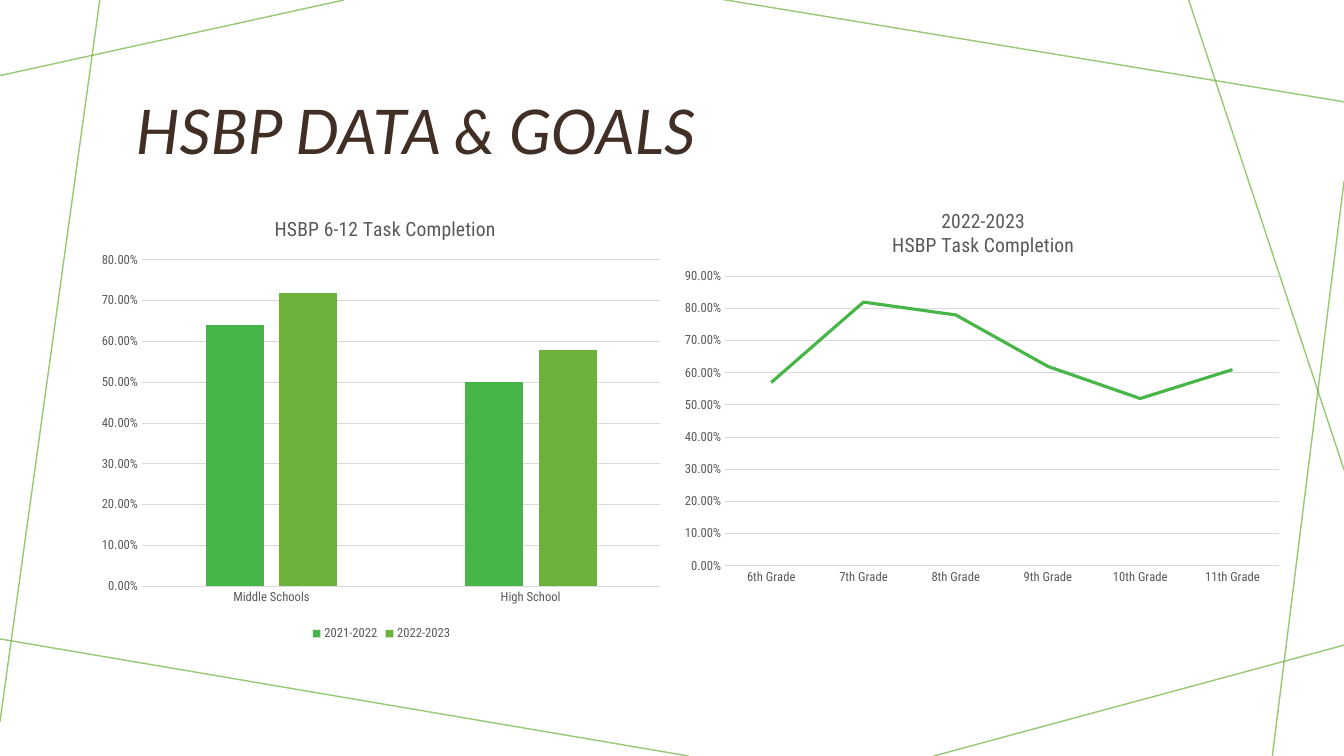
import dataclasses

import pptx
import pptx.chart.data
import pptx.dml.color
import pptx.enum.chart
import pptx.enum.shapes
import pptx.enum.text
import pptx.oxml
import pptx.oxml.ns
import pptx.util

Inches = pptx.util.Inches
Pt = pptx.util.Pt


@dataclasses.dataclass(frozen=True)
class Theme:
    green: str = "47B547"
    olive: str = "6CB13B"
    brown: str = "412E24"
    gray: str = "595959"
    grid: str = "D9D9D9"
    title_font: str = "Lato"
    chart_font: str = "Roboto Condensed"
    title_size: float = 44
    chart_title_size: float = 14
    label_size: float = 9
    rule_width: float = 1
    grid_width: float = 0.75
    series_width: float = 2.25


THEME = Theme()

RULES = [
    (3.41, 0, 0, 0.75),
    (0.99, 0, 0, 7.16),
    (6.83, 7.5, -0.05, 6.33),
    (13.33, 6.4, 9.26, 7.5),
    (13.33, 1.8, 12.62, 7.5),
    (13.33, 4.66, 11.79, 0),
    (13.33, 1.01, 7.14, -0.01),
]


def rgb(value):
    return pptx.dml.color.RGBColor.from_string(value)


def style_font(font, name, size, color):
    font.name = name
    font.size = Pt(size)
    font.color.rgb = rgb(color)


def style_line(line, color, width):
    line.color.rgb = rgb(color)
    line.width = Pt(width)


def add_rule(slide, x1, y1, x2, y2):
    straight = pptx.enum.shapes.MSO_CONNECTOR.STRAIGHT
    rule = slide.shapes.add_connector(
        straight, Inches(x1), Inches(y1), Inches(x2), Inches(y2))
    style_line(rule.line, THEME.olive, THEME.rule_width)
    sp_pr = rule._element.spPr
    color = sp_pr.find(".//" + pptx.oxml.ns.qn("a:srgbClr"))
    color.append(pptx.oxml.parse_xml(
        f'<a:alpha {pptx.oxml.ns.nsdecls("a")} val="70000"/>'))
    sp_pr.append(pptx.oxml.parse_xml(
        f'<a:effectLst {pptx.oxml.ns.nsdecls("a")}/>'))


def add_title(slide, text):
    sp = slide.shapes.add_textbox(
        Inches(1.25), Inches(0.58), Inches(10.83), Inches(1.51))
    tf = sp.text_frame
    tf.word_wrap = True
    tf.vertical_anchor = pptx.enum.text.MSO_ANCHOR.MIDDLE
    p = tf.paragraphs[0]
    p.line_spacing = 0.9
    r = p.add_run()
    r.text = text
    r.font.italic = True
    style_font(r.font, THEME.title_font, THEME.title_size, THEME.brown)


def manual_layout(x, y, w=None, h=None):
    target = "" if w is None else '<c:layoutTarget val="inner"/>'
    size = "" if w is None else f'<c:w val="{w:.3f}"/><c:h val="{h:.3f}"/>'
    return pptx.oxml.parse_xml(
        f'<c:layout {pptx.oxml.ns.nsdecls("c")}><c:manualLayout>{target}'
        '<c:xMode val="edge"/><c:yMode val="edge"/>'
        f'<c:x val="{x:.3f}"/><c:y val="{y:.3f}"/>{size}'
        '</c:manualLayout></c:layout>')


def replace_layout(parent, layout, position):
    for old in parent.findall(pptx.oxml.ns.qn("c:layout")):
        parent.remove(old)
    parent.insert(position, layout)


def add_chart_title(chart, lines, x, y):
    title = chart.chart_title
    tf = title.text_frame
    for i, text in enumerate(lines):
        p = tf.add_paragraph() if i else tf.paragraphs[0]
        r = p.add_run()
        r.text = text
        r.font.bold = False
        style_font(r.font, THEME.chart_font, THEME.chart_title_size, THEME.gray)
    title.include_in_layout = False
    replace_layout(title._element, manual_layout(x, y), 1)


def style_axes(chart, maximum):
    no_tick = pptx.enum.chart.XL_TICK_MARK.NONE
    for axis in (chart.category_axis, chart.value_axis):
        axis.major_tick_mark = no_tick
        axis.minor_tick_mark = no_tick
        style_font(axis.tick_labels.font, THEME.chart_font,
                   THEME.label_size, THEME.gray)
    style_line(chart.category_axis.format.line, THEME.grid, THEME.grid_width)
    values = chart.value_axis
    values.minimum_scale = 0
    values.maximum_scale = maximum
    values.major_unit = 0.1
    values.format.line.fill.background()
    style_line(values.major_gridlines.format.line, THEME.grid, THEME.grid_width)
    values.tick_labels.number_format = "0.00%"
    values.tick_labels.number_format_is_linked = False


def add_chart(slide, kind, box, categories, series, title, title_at, plot, maximum):
    data = pptx.chart.data.CategoryChartData(number_format="0.00%")
    data.categories = categories
    for name, values in series:
        data.add_series(name, values)
    chart = slide.shapes.add_chart(kind, *map(Inches, box), data).chart
    style_font(chart.font, THEME.chart_font, THEME.label_size, THEME.gray)
    chart.has_legend = False
    chart.plots[0].vary_by_categories = False
    add_chart_title(chart, title, *title_at)
    style_axes(chart, maximum)
    left, top, width, height = box
    x, y, w, h = plot
    layout = manual_layout((x - left) / width, (y - top) / height,
                           w / width, h / height)
    replace_layout(chart._chartSpace.chart.plotArea, layout, 0)
    return chart


def add_school_chart(slide):
    chart = add_chart(
        slide, pptx.enum.chart.XL_CHART_TYPE.COLUMN_CLUSTERED,
        (0.9, 1.92, 5.77, 4.48), ["Middle Schools", "High School"],
        [("2021-2022", [0.64, 0.5]), ("2022-2023", [0.72, 0.58])],
        ["HSBP 6-12 Task Completion"], (0.31, 0.04),
        (1.41, 2.58, 5.14, 3.24), 0.8)
    plot = chart.plots[0]
    plot.gap_width = 219
    plot.overlap = -27
    for s, color in zip(plot.series, (THEME.green, THEME.olive)):
        s.format.fill.solid()
        s.format.fill.fore_color.rgb = rgb(color)
    chart.has_legend = True
    chart.legend.position = pptx.enum.chart.XL_LEGEND_POSITION.BOTTOM
    chart.legend.include_in_layout = False
    style_font(chart.legend.font, THEME.chart_font, THEME.label_size, THEME.gray)


def add_grade_chart(slide):
    chart = add_chart(
        slide, pptx.enum.chart.XL_CHART_TYPE.LINE, (6.67, 1.87, 6.14, 4),
        [f"{grade}th Grade" for grade in range(6, 12)],
        [("Series 1", [0.57, 0.82, 0.78, 0.62, 0.52, 0.61])],
        ["2022-2023", "HSBP Task Completion"], (0.35, 0.04),
        (7.19, 2.74, 5.49, 2.87), 0.9)
    s = chart.plots[0].series[0]
    s.smooth = False
    s.marker.style = pptx.enum.chart.XL_MARKER_STYLE.NONE
    style_line(s.format.line, THEME.green, THEME.series_width)


def main():
    prs = pptx.Presentation()
    prs.slide_width = Inches(13.33)
    prs.slide_height = Inches(7.5)
    slide = prs.slides.add_slide(prs.slide_layouts[6])
    for rule in RULES:
        add_rule(slide, *rule)
    add_title(slide, "HSBP DATA & GOALS")
    add_school_chart(slide)
    add_grade_chart(slide)
    prs.save("out.pptx")


if __name__ == "__main__":
    main()
